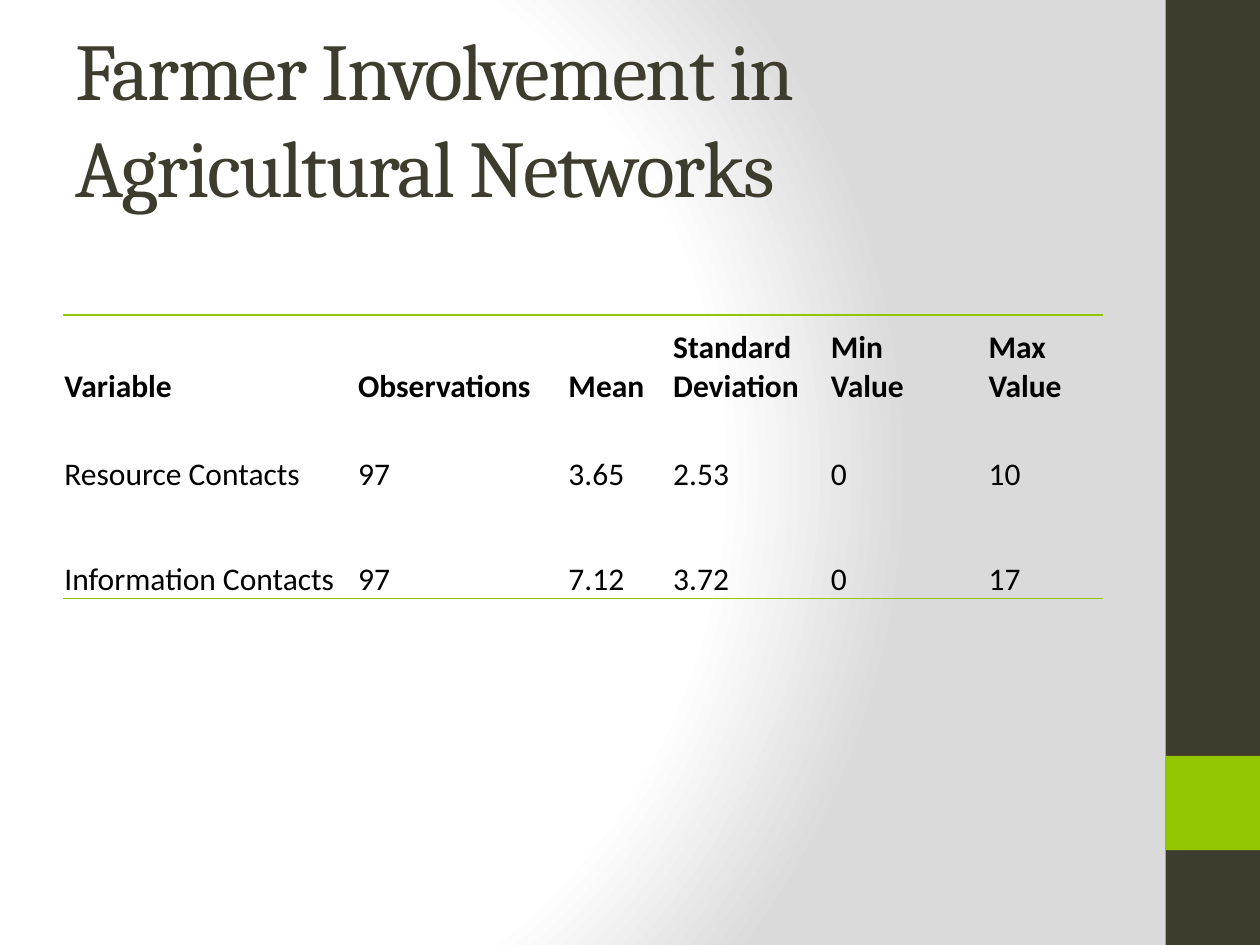
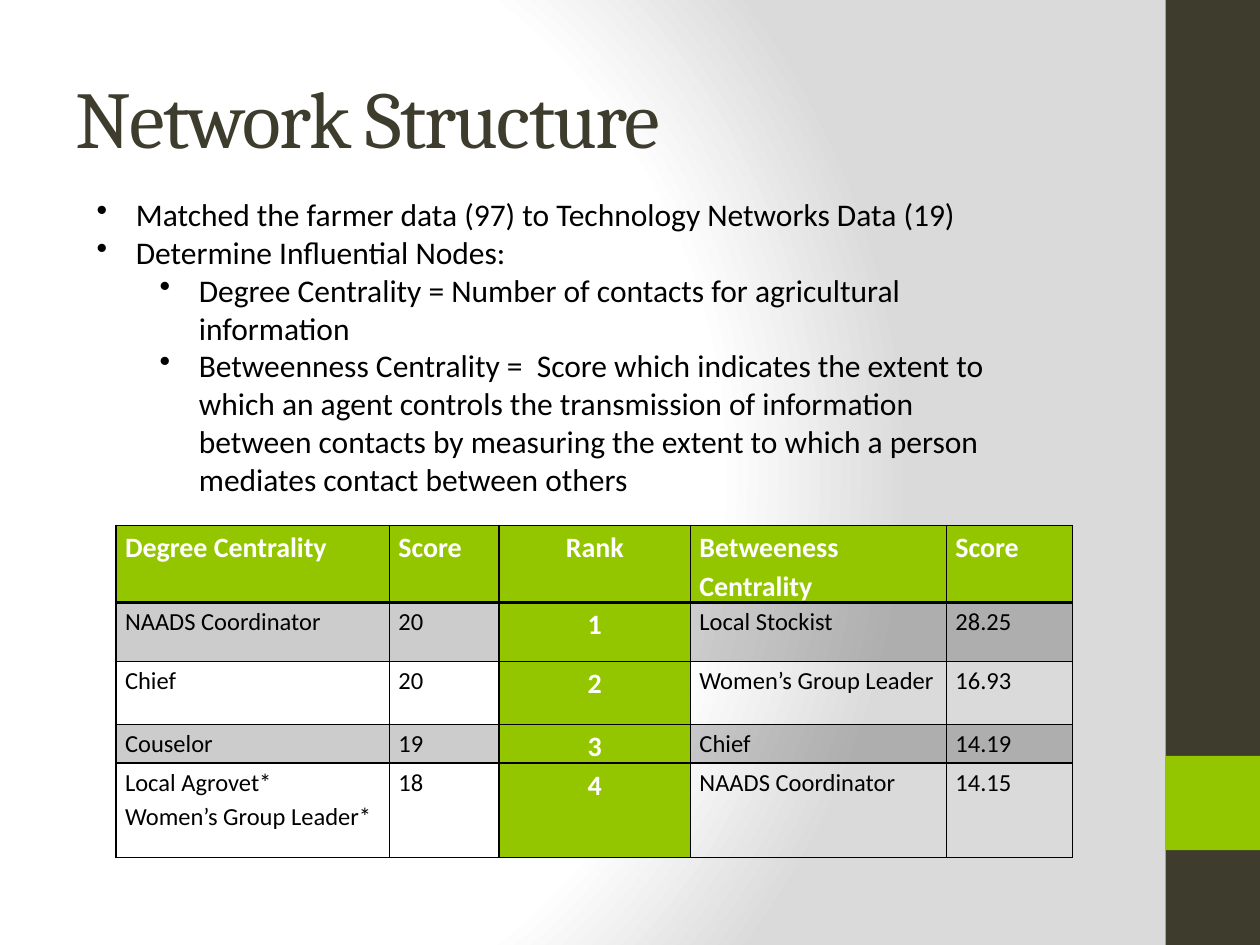
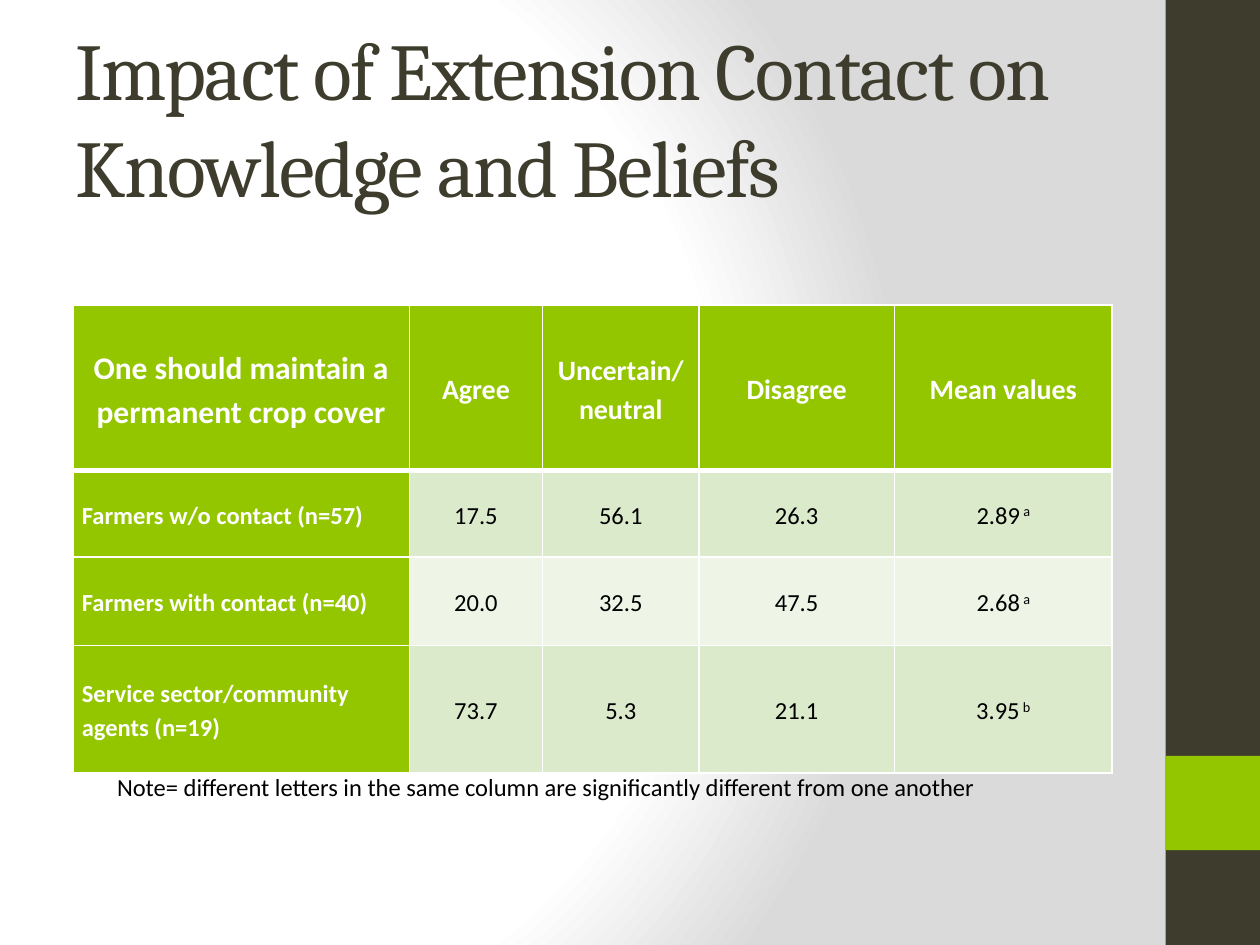
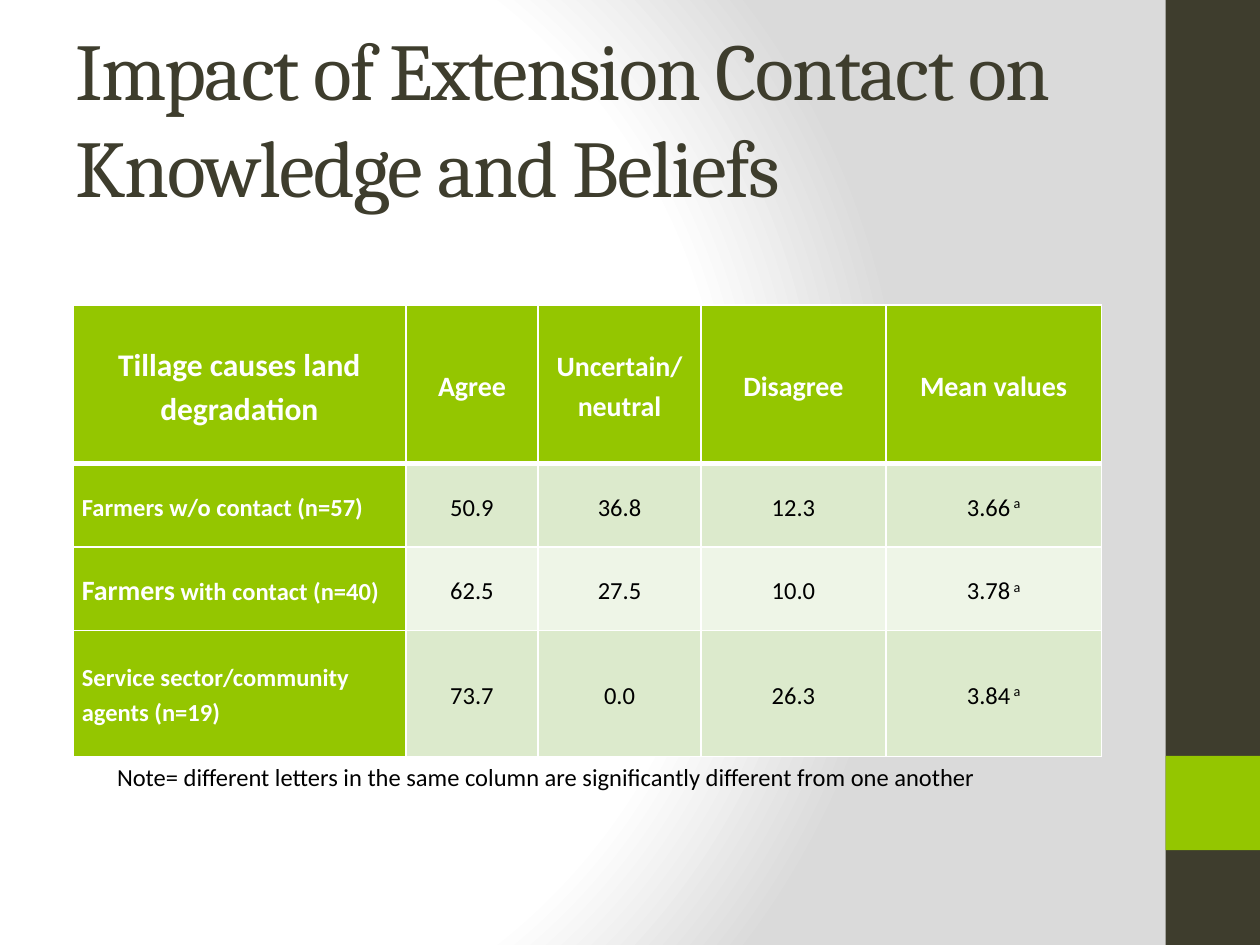
from dataclasses import dataclass

from lxml.etree import SubElement
from pptx import Presentation
from pptx.dml.color import RGBColor
from pptx.enum.shapes import MSO_SHAPE
from pptx.enum.text import MSO_ANCHOR, MSO_AUTO_SIZE, PP_ALIGN
from pptx.oxml import parse_xml
from pptx.oxml.ns import nsdecls, qn
from pptx.util import Cm, Pt


@dataclass(frozen=True)
class Theme:
    head: str = "Cambria"
    body: str = "Calibri"
    dark: str = "3E3D2D"
    green: str = "94C600"
    white: str = "FFFFFF"
    black: str = "000000"
    grey: str = "DADADA"
    tints: tuple = ("DCEACC", "EEF5E7")
    title: int = 46
    large: int = 18
    mid: int = 16
    small: int = 14


T = Theme()
WIDE, HIGH = 25.4, 19.05
SIDE = 1.9  # width of the side band and edge of its square
IMPACT = "Impact of Extension Contact on Knowledge and Beliefs"
ANSWERS = ["Agree", "Uncertain/ neutral", "Disagree", "Mean values"]
NOTE = ("Note= different letters in the same column are "
        "significantly different from one another")
BULLETS = [
    (0, "Matched the farmer data (97) to Technology Networks Data (19)"),
    (0, "Determine Influential Nodes:"),
    (1, "Degree Centrality = Number of contacts for agricultural information"),
    (1, "Betweenness Centrality =  Score which indicates the extent to which "
        "an agent controls the transmission of information between contacts "
        "by measuring the extent to which a person mediates contact between "
        "others"),
]


def mean(value, letter):
    return [(value, ""), (" " + letter, "super")]


# A cell is a string (one paragraph a line) or a list of (text, mark) runs.
SLIDES = [
    {"title": "Farmer Involvement in Agricultural Networks",
     "table": {
         "kind": "plain", "at": (1.27, 6.35),
         "cols": [5.92, 4.24, 2.11, 3.18, 3.18, 2.34],
         "rows": [1.83, 1.78, 2.11],
         "cells": [
             ["Variable", "Observations", "Mean", "Standard Deviation",
              "Min\nValue", "Max\nValue"],
             ["Resource Contacts", "97", "3.65", "2.53", "0", "10"],
             ["Information Contacts", "97", "7.12", "3.72", "0", "17"]]}},
    {"title": "Network Structure",
     "bullets": BULLETS,
     "table": {
         "kind": "rank", "at": (2.34, 10.59),
         "cols": [5.51, 2.21, 3.86, 5.16, 2.54],
         "rows": [1.45, 1.19, 1.27, 0.74, 1.9],
         "cells": [
             ["Degree Centrality", "Score", "Rank", "Betweeness Centrality",
              "Score"],
             ["NAADS Coordinator", "20", "1", "Local Stockist", "28.25"],
             ["Chief", "20", "2", "Women’s Group Leader", "16.93"],
             ["Couselor", "19", "3", "Chief", "14.19"],
             ["Local Agrovet*\nWomen’s Group Leader*", "18", "4",
              "NAADS Coordinator", "14.15"]]}},
    {"title": IMPACT,
     "note": 15.44,
     "table": {
         "kind": "survey", "at": (1.47, 6.15),
         "cols": [6.78, 2.69, 3.15, 3.94, 4.39],
         "rows": [3.33, 1.75, 1.78, 2.57],
         "cells": [
             ["One should maintain a permanent crop cover", *ANSWERS],
             ["Farmers w/o contact (n=57)", "17.5", "56.1", "26.3",
              mean("2.89", "a")],
             ["Farmers with contact (n=40)", "20.0", "32.5", "47.5",
              mean("2.68", "a")],
             ["Service sector/community agents (n=19)", "73.7", "5.3", "21.1",
              mean("3.95", "b")]]}},
    {"title": IMPACT,
     "note": 15.24,
     "table": {
         "kind": "survey", "at": (1.47, 6.15),
         "cols": [6.71, 2.67, 3.28, 3.73, 4.34],
         "rows": [3.2, 1.68, 1.68, 2.54],
         "cells": [
             ["Tillage causes land degradation", *ANSWERS],
             ["Farmers w/o contact (n=57)", "50.9", "36.8", "12.3",
              mean("3.66", "a")],
             [[("Farmers", "big"), (" with contact (n=40)", "")],
              "62.5", "27.5", "10.0", mean("3.78", "a")],
             ["Service sector/community agents (n=19)", "73.7", "0.0", "26.3",
              mean("3.84", "a")]]}},
]

# Per kind: line colour, anchor, insets (left, top, right, bottom), spacing
KINDS = {
    "plain": (T.green, MSO_ANCHOR.BOTTOM, (0.03, 0.03, 0.03, 0), None),
    "rank": (T.black, MSO_ANCHOR.TOP, (0.18, 0, 0.18, 0), 1.15),
    "survey": (T.white, MSO_ANCHOR.MIDDLE, (0.18, 0, 0.18, 0), 1.15),
}
HEAVY = {"rank": 2, "survey": 3}  # line under the heading row


def rgb(code):
    return RGBColor.from_string(code)


def dress(para, size, color=T.black, bold=False, face=T.body):
    font = para.font
    font.name, font.size, font.bold = face, Pt(size), bold
    font.color.rgb = rgb(color)


def put_box(slide, left, top, width, height):
    box = slide.shapes.add_textbox(Cm(left), Cm(top), Cm(width), Cm(height))
    box.text_frame.word_wrap = True
    return box.text_frame


def set_master(master, slide):
    """Give the master the background and the side band, drawn via a slide."""
    master.background.fill.solid()
    back = master.element.find(".//" + qn("p:bgPr"))
    stops = "".join(
        f'<a:gs pos="{pos * 1000}"><a:srgbClr val="{code}"/></a:gs>'
        for pos, code in ((0, T.white), (75, T.white), (100, T.grey)))
    back.replace(back[0], parse_xml(
        f'<a:gradFill {nsdecls("a")} rotWithShape="1">'
        f'<a:gsLst>{stops}</a:gsLst><a:path path="circle">'
        '<a:fillToRect l="20000" t="50000" r="100000" b="50000"/>'
        '</a:path></a:gradFill>'))
    bands = ((0, HIGH, T.dark), (HIGH * 0.8, SIDE, T.green))
    for num, (top, height, code) in enumerate(bands, 20):
        band = slide.shapes.add_shape(
            MSO_SHAPE.RECTANGLE, Cm(WIDE - SIDE), Cm(top), Cm(SIDE), Cm(height))
        band.shadow.inherit = False
        band.fill.solid()
        band.fill.fore_color.rgb = rgb(code)
        band.line.fill.background()
        band.element.xpath(".//p:cNvPr")[0].set("id", str(num))
        master.shapes.element.append(band.element)


def put_title(slide, text):
    frame = put_box(slide, 1.27, 0.76, 21.16, 3.18)
    frame.vertical_anchor = MSO_ANCHOR.MIDDLE
    para = frame.paragraphs[0]
    para.text = text
    dress(para, T.title, T.dark, face=T.head)
    para.font._rPr.set("spc", "-100")


def put_list(slide, items):
    frame = put_box(slide, 1.7, 3.81, 18.85, 6.4)
    frame.auto_size = MSO_AUTO_SIZE.SHAPE_TO_FIT_TEXT
    for num, (level, text) in enumerate(items):
        para = frame.add_paragraph() if num else frame.paragraphs[0]
        para.text, para.level = text, level
        dress(para, T.large)
        props = para._p.get_or_add_pPr()
        props.set("marL", str(Cm(0.79 + 1.27 * level)))
        props.set("indent", str(Cm(-0.79)))
        mark = parse_xml(f'<a:buChar {nsdecls("a")} char="•"/>')
        props.insert(0, mark)


def put_note(slide, top):
    frame = put_box(slide, 2.11, top, 19.05, 0.86)
    frame.auto_size = MSO_AUTO_SIZE.SHAPE_TO_FIT_TEXT
    frame.paragraphs[0].text = NOTE
    dress(frame.paragraphs[0], T.small)


def look(kind, row, col):
    """Return size, colour, bold, fill, alpha and centring of a cell."""
    if kind == "plain":
        return T.large, T.black, row == 0, None, None, False
    if kind == "rank":
        if row == 0 or col == 2:
            return T.mid, T.white, True, T.green, None, col == 2
        fill = T.black if row % 2 else None
        return T.small, T.black, False, fill, 20, False
    if row == 0:
        size = T.mid if col else T.large
        return size, T.white, True, T.green, None, True
    if col == 0:
        return T.small, T.white, True, T.green, None, False
    return T.small, T.black, False, T.tints[(row - 1) % 2], None, True


def edges(kind, row, last):
    """Return the line widths left, right, top and bottom."""
    if kind == "plain":
        return 0, 0, int(row == 0), int(row == last)
    heavy = HEAVY[kind]
    return 1, 1, heavy if row == 1 else 1, heavy if row == 0 else 1


def draw_edges(cell, widths, code):
    props = cell._tc.get_or_add_tcPr()
    for side, width in zip("LRTB", widths):
        line = SubElement(props, qn("a:ln" + side), w=str(Pt(width)))
        if width:
            fill = SubElement(line, qn("a:solidFill"))
            SubElement(fill, qn("a:srgbClr"), val=code)
        else:
            SubElement(line, qn("a:noFill"))


def fill_cell(cell, code, alpha):
    if not code:
        cell.fill.background()
        return
    cell.fill.solid()
    cell.fill.fore_color.rgb = rgb(code)
    if alpha:
        color = cell._tc.tcPr.xpath("a:solidFill/a:srgbClr")[0]
        SubElement(color, qn("a:alpha"), val=str(alpha * 1000))


def write_cell(cell, content):
    if isinstance(content, str):
        cell.text_frame.text = content
        return
    for text, mark in content:
        run = cell.text_frame.paragraphs[0].add_run()
        run.text = text
        if mark == "big":
            run.font.size = Pt(T.mid)
        elif mark == "super":
            run.font._rPr.set("baseline", "30000")


def put_table(slide, kind, at, cols, rows, cells):
    sizes = (*at, sum(cols), sum(rows))
    table = slide.shapes.add_table(len(rows), len(cols), *map(Cm, sizes)).table
    table.first_row = table.horz_banding = False
    for part, width in zip(table.columns, cols):
        part.width = Cm(width)
    for part, height in zip(table.rows, rows):
        part.height = Cm(height)
    line, anchor, insets, space = KINDS[kind]
    for row, texts in enumerate(cells):
        for col, content in enumerate(texts):
            cell = table.cell(row, col)
            size, color, bold, fill, alpha, mid = look(kind, row, col)
            write_cell(cell, content)
            cell.vertical_anchor = anchor
            (cell.margin_left, cell.margin_top, cell.margin_right,
             cell.margin_bottom) = map(Cm, insets)
            draw_edges(cell, edges(kind, row, len(rows) - 1), line)
            fill_cell(cell, fill, alpha)
            for para in cell.text_frame.paragraphs:
                dress(para, size, color, bold)
                para.alignment = PP_ALIGN.CENTER if mid else PP_ALIGN.LEFT
                para.line_spacing = space


def main():
    deck = Presentation()
    deck.slide_width, deck.slide_height = Cm(WIDE), Cm(HIGH)
    for num, page in enumerate(SLIDES):
        slide = deck.slides.add_slide(deck.slide_layouts[6])
        if num == 0:
            set_master(deck.slide_master, slide)
        put_title(slide, page["title"])
        if "bullets" in page:
            put_list(slide, page["bullets"])
        put_table(slide, **page["table"])
        if "note" in page:
            put_note(slide, page["note"])
    deck.save("out.pptx")


if __name__ == "__main__":
    main()
